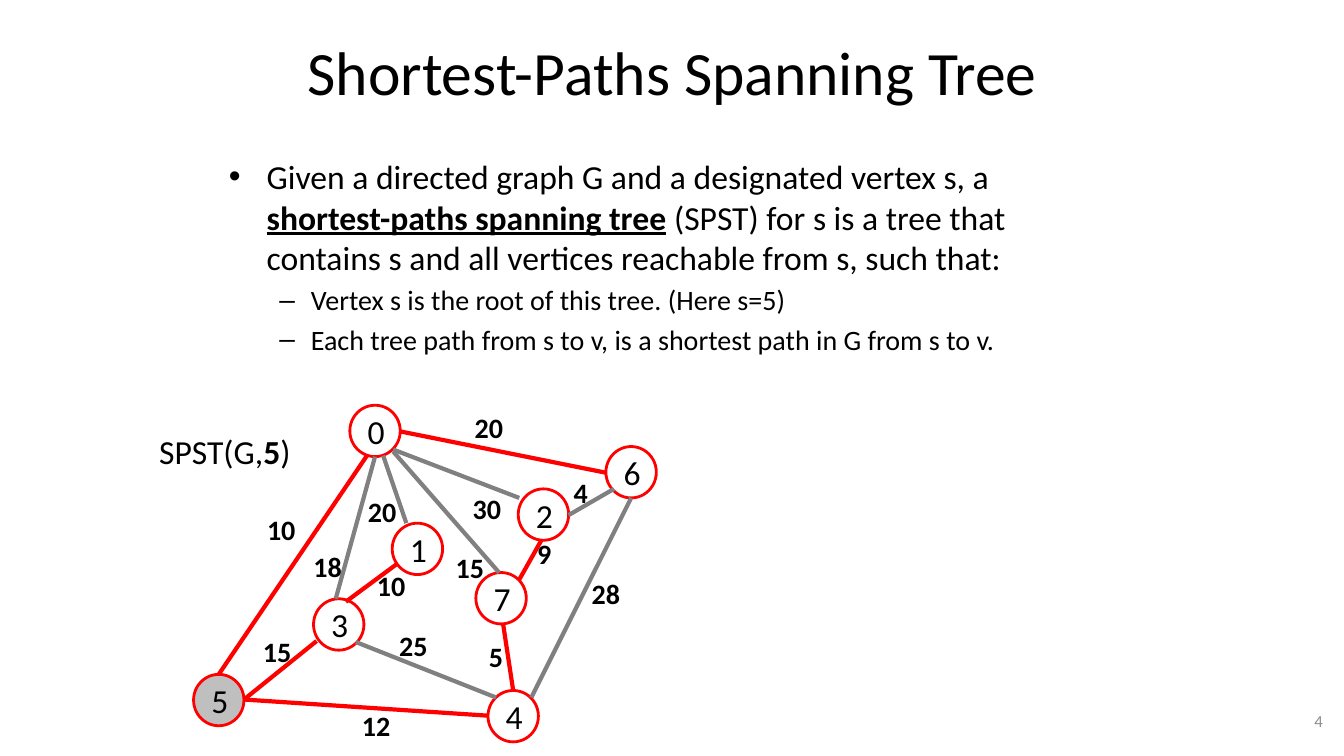
from dataclasses import dataclass

from lxml.etree import SubElement
from pptx import Presentation
from pptx.dml.color import RGBColor
from pptx.enum.shapes import MSO_CONNECTOR, MSO_SHAPE
from pptx.enum.text import MSO_ANCHOR, PP_ALIGN
from pptx.oxml.ns import qn
from pptx.util import Pt

PX = 9144  # EMU per px, 100 px to the inch


@dataclass(frozen=True)
class Theme:
    font: str = "Calibri"
    ink: RGBColor = RGBColor(0x00, 0x00, 0x00)
    tree: RGBColor = RGBColor(0xFF, 0x00, 0x00)
    other: RGBColor = RGBColor(0x80, 0x80, 0x80)
    root: RGBColor = RGBColor(0xBF, 0xBF, 0xBF)
    faint: RGBColor = RGBColor(0x8C, 0x8C, 0x8C)
    title_size: int = 44
    body_size: int = 24
    label_size: int = 20
    number_size: int = 12
    outline: int = 2
    edge: int = 3


THEME = Theme()

BODY = [
    (0, THEME.body_size, [
        ("Given a directed graph G and a designated vertex s, a ", {}),
        ("shortest-paths spanning tree", {"bold": True, "underline": True}),
        (" (SPST) for s is a tree that contains s and all vertices "
         "reachable from s, such that:", {}),
    ]),
    (1, THEME.label_size, [("Vertex s is the root of this tree. (Here s=5)", {})]),
    (1, THEME.label_size, [
        ("Each tree path from s to v, is a shortest path in G from s to v.", {}),
    ]),
]

ROOT = 5
VERTICES = {  # left, top
    0: (347, 402), 1: (389, 519), 2: (514, 485), 3: (311, 594),
    4: (484, 685), 5: (192, 669), 6: (601, 443), 7: (472, 568),
}
EDGES = [  # start, end, in the tree, weight, left and top of the weight
    ((397, 428), (601, 469), True, 20, (461, 402)),
    ((390, 446), (515, 494), False, 30, (459, 483)),
    ((380, 452), (403, 519), False, 20, (355, 486)),
    ((364, 452), (217, 669), True, 10, (255, 504)),
    ((390, 448), (495, 568), False, 15, (442, 541)),
    ((372, 453), (333, 594), False, 18, (301, 540)),
    ((242, 694), (314, 636), True, 15, (251, 625)),
    ((242, 694), (484, 710), True, 12, (349, 698)),
    ((353, 637), (492, 692), False, 25, (386, 619)),
    ((343, 597), (393, 560), True, 10, (364, 559)),
    ((499, 619), (509, 685), True, 5, (475, 630)),
    ((515, 575), (537, 536), True, 9, (523, 527)),
    ((564, 511), (609, 485), False, 4, (559, 467)),
    ((626, 494), (527, 692), False, 28, (577, 567)),
]


def emu(*lengths):
    return [length * PX for length in lengths]


def place(shape, *bounds):
    for name, value in zip(("left", "top", "width", "height"), emu(*bounds)):
        setattr(shape, name, value)


def write(para, spans, size, color=THEME.ink):
    """Add spans, each a text with a dict of its own font values."""
    for text, extra in spans:
        span = para.add_run()
        span.text = text
        values = {"name": THEME.font, "size": Pt(size)} | extra
        for name, value in values.items():
            setattr(span.font, name, value)
        span.font.color.rgb = color


def add_title(page):
    place(page.shapes.title, 67, 8, 1200, 125)
    para = page.shapes.title.text_frame.paragraphs[0]
    write(para, [("Shortest-Paths Spanning Tree", {})], THEME.title_size)


def add_body(page):
    body = page.placeholders[1]
    place(body, 217, 150, 900, 225)
    frame = body.text_frame
    for index, (level, size, spans) in enumerate(BODY):
        para = frame.add_paragraph() if index else frame.paragraphs[0]
        para.level = level
        write(para, spans, size)


def add_label(page, bounds, spans, size, color=THEME.ink, align=PP_ALIGN.LEFT,
              anchor=MSO_ANCHOR.TOP):
    frame = page.shapes.add_textbox(*emu(*bounds)).text_frame
    frame.word_wrap = False
    frame.vertical_anchor = anchor
    frame.paragraphs[0].alignment = align
    write(frame.paragraphs[0], spans, size, color)


def add_vertex(page, number, left, top):
    circle = page.shapes.add_shape(MSO_SHAPE.OVAL, *emu(left, top, 50, 51))
    circle.shadow.inherit = False
    circle.line.color.rgb = THEME.tree
    circle.line.width = Pt(THEME.outline)
    if number == ROOT:
        circle.fill.solid()
        circle.fill.fore_color.rgb = THEME.root
    else:
        circle.fill.background()
    frame = circle.text_frame
    values = {"word_wrap": False, "vertical_anchor": MSO_ANCHOR.MIDDLE,
              "margin_left": 2 * PX, "margin_right": 0,
              "margin_top": 0, "margin_bottom": 0}
    for name, value in values.items():
        setattr(frame, name, value)
    frame.paragraphs[0].alignment = PP_ALIGN.CENTER
    write(frame.paragraphs[0], [(str(number), {})], THEME.body_size)


def add_edge(page, start, end, in_tree):
    edge = page.shapes.add_connector(MSO_CONNECTOR.STRAIGHT, *emu(*start, *end))
    edge.line.color.rgb = THEME.tree if in_tree else THEME.other
    edge.line.width = Pt(THEME.edge)
    SubElement(edge._element.spPr, qn("a:effectLst"))


def add_weight(page, weight, left, top):
    text = str(weight)
    bounds = (left, top, 19 + 15 * len(text), 44)
    add_label(page, bounds, [(text, {"bold": True})], THEME.label_size)


def main():
    deck = Presentation()
    deck.slide_width, deck.slide_height = emu(1333, 750)
    page = deck.slides.add_slide(deck.slide_layouts[1])
    add_title(page)
    add_body(page)
    add_label(page, (1011, 695, 311, 40), [("4", {})], THEME.number_size,
              THEME.faint, PP_ALIGN.RIGHT, MSO_ANCHOR.MIDDLE)
    for number, corner in VERTICES.items():
        add_vertex(page, number, *corner)
    for start, end, in_tree, weight, corner in EDGES:
        add_edge(page, start, end, in_tree)
        add_weight(page, weight, *corner)
    add_label(page, (148, 423, 152, 50),
              [("SPST(G,", {}), ("5", {"bold": True}), (")", {})],
              THEME.body_size)
    deck.save("out.pptx")


if __name__ == "__main__":
    main()
